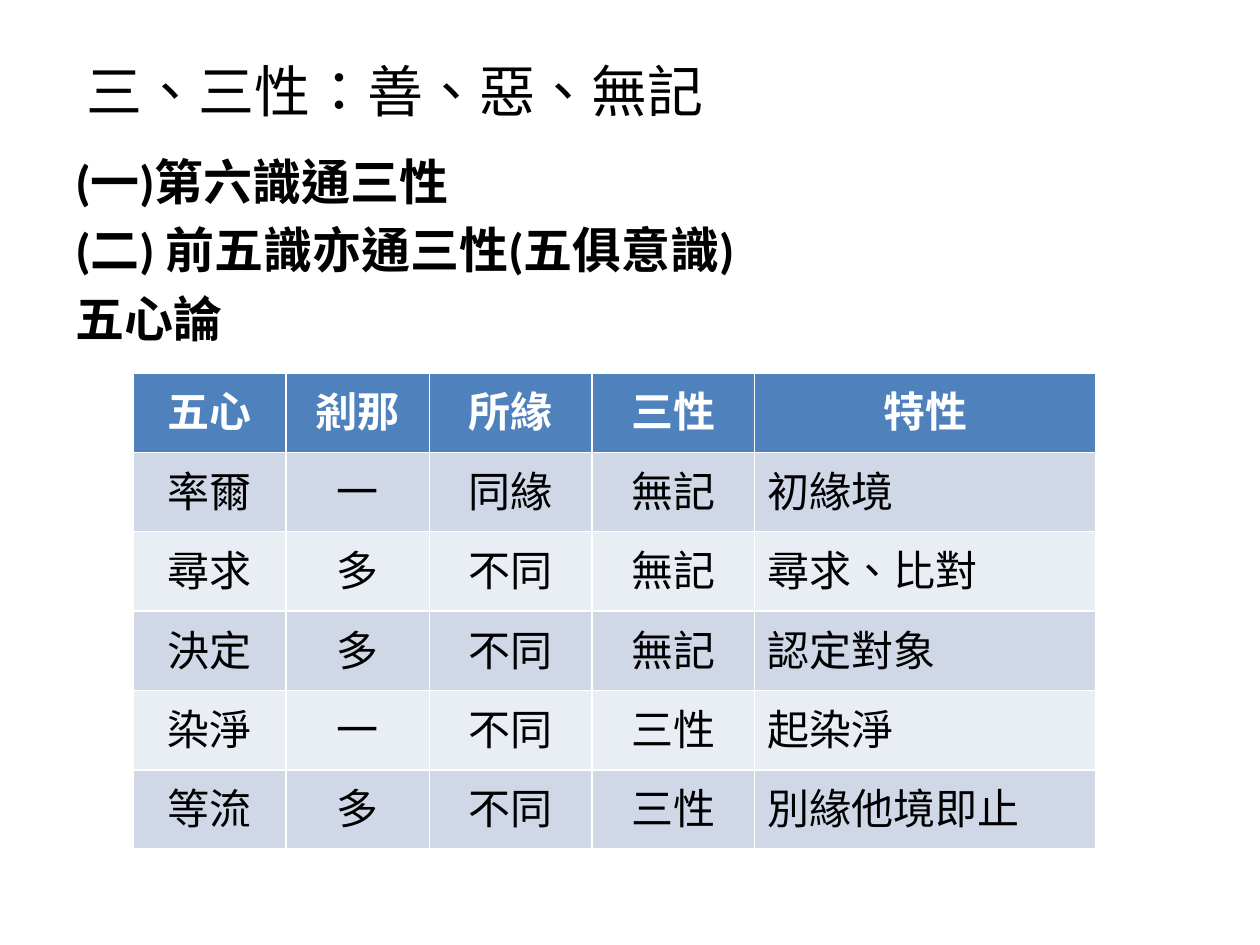
from dataclasses import dataclass

from pptx import Presentation
from pptx.dml.color import RGBColor
from pptx.enum.lang import MSO_LANGUAGE_ID
from pptx.enum.text import MSO_ANCHOR, PP_ALIGN
from pptx.util import Inches, Pt


@dataclass(frozen=True)
class Theme:
    """Font, colours and type sizes of the slide."""
    font: str = "Calibri"
    ink: str = "000000"
    white: str = "FFFFFF"
    header: str = "4F81BD"
    bands: tuple = ("D0D8E8", "E9EDF4")
    title_pt: float = 32
    body_pt: float = 28
    cell_pt: float = 24


@dataclass(frozen=True)
class Mind:
    """One of the five minds, as a table row."""
    name: str
    moment: str
    object: str
    nature: str
    trait: str

    def values(self) -> tuple:
        """Return the cell texts from left to right."""
        return self.name, self.moment, self.object, self.nature, self.trait


T = Theme()
HEADINGS = ["(一)第六識通三性", "(二) 前五識亦通三性(五俱意識)", "五心論"]
COLUMN_WIDTHS = [1.21, 1.14, 1.29, 1.29, 2.71]
ROW_HEIGHT = 0.63
ROWS = [
    Mind("五心", "剎那", "所緣", "三性", "特性"),
    Mind("率爾", "一", "同緣", "無記", "初緣境"),
    Mind("尋求", "多", "不同", "無記", "尋求、比對"),
    Mind("決定", "多", "不同", "無記", "認定對象"),
    Mind("染淨", "一", "不同", "三性", "起染淨"),
    Mind("等流", "多", "不同", "三性", "別緣他境即止"),
]


def write(p, text: str, *, size: float, color: str = T.ink, bold: bool = False,
          align=PP_ALIGN.LEFT, before: float = 0) -> None:
    """Add formatted text to a paragraph."""
    p.alignment = align
    p.space_before = Pt(before)
    r = p.add_run()
    r.text = text
    r.font.name, r.font.size, r.font.bold = T.font, Pt(size), bold
    r.font.color.rgb = RGBColor.from_string(color)
    r.font.language_id = MSO_LANGUAGE_ID.TRADITIONAL_CHINESE


def add_title(s, text: str) -> None:
    """Place and fill the title placeholder."""
    sp = s.shapes.title
    sp.left, sp.top = Inches(0.59), Inches(0.36)
    sp.width, sp.height = Inches(9), Inches(0.71)
    tf = sp.text_frame
    tf.vertical_anchor = MSO_ANCHOR.MIDDLE
    write(tf.paragraphs[0], text, size=T.title_pt)


def add_headings(s, lines: list[str]) -> None:
    """Add the bold headings, one paragraph each."""
    sp = s.shapes.add_textbox(Inches(0.5), Inches(1.15), Inches(9), Inches(5.98))
    tf = sp.text_frame
    tf.word_wrap = True
    for i, line in enumerate(lines):
        p = tf.add_paragraph() if i else tf.paragraphs[0]
        write(p, line, size=T.body_pt, bold=True, before=T.body_pt * 0.2)


def add_minds(s, rows: list[Mind]) -> None:
    """Add the banded table of the five minds."""
    tbl = s.shapes.add_table(
        len(rows), len(COLUMN_WIDTHS), Inches(1.06), Inches(2.96),
        Inches(sum(COLUMN_WIDTHS)), Inches(ROW_HEIGHT * len(rows))).table
    for col, width in zip(tbl.columns, COLUMN_WIDTHS):
        col.width = Inches(width)
    for i, mind in enumerate(rows):
        head = i == 0
        tbl.rows[i].height = Inches(ROW_HEIGHT)
        for j, text in enumerate(mind.values()):
            cell = tbl.cell(i, j)
            cell.fill.solid()
            fill = T.header if head else T.bands[(i - 1) % 2]
            cell.fill.fore_color.rgb = RGBColor.from_string(fill)
            centred = head or j < len(COLUMN_WIDTHS) - 1
            write(cell.text_frame.paragraphs[0], text, size=T.cell_pt, bold=head,
                  color=T.white if head else T.ink,
                  align=PP_ALIGN.CENTER if centred else PP_ALIGN.LEFT)


def main() -> None:
    """Build and save the slide."""
    prs = Presentation()
    prs.slide_width, prs.slide_height = Inches(10), Inches(7.5)
    s = prs.slides.add_slide(prs.slide_layouts[5])
    add_title(s, "三、三性：善、惡、無記")
    add_headings(s, HEADINGS)
    add_minds(s, ROWS)
    prs.save("out.pptx")


if __name__ == "__main__":
    main()
